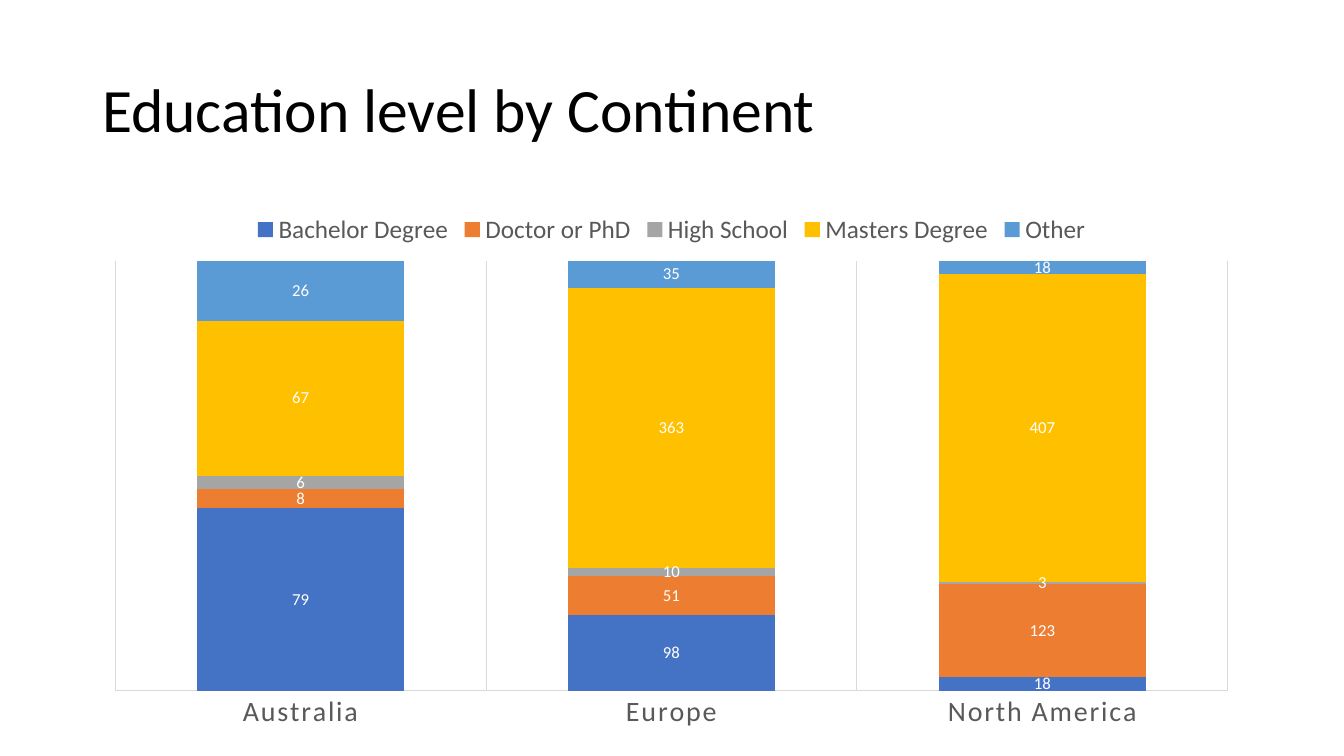
from pptx import Presentation
from pptx.chart.data import CategoryChartData
from pptx.dml.color import RGBColor
from pptx.enum.chart import XL_CHART_TYPE, XL_LABEL_POSITION, XL_LEGEND_POSITION, XL_TICK_MARK
from pptx.enum.text import MSO_ANCHOR, PP_ALIGN
from pptx.util import Emu, Pt

STACKED_100 = XL_CHART_TYPE.COLUMN_STACKED_100
LABEL_CENTER = XL_LABEL_POSITION.CENTER
LEGEND_TOP = XL_LEGEND_POSITION.TOP
NO_TICKS = XL_TICK_MARK.NONE
MIDDLE = MSO_ANCHOR.MIDDLE
LEFT = PP_ALIGN.LEFT

FONT = "Calibri"
BLACK, WHITE, TEXT_GREY, LINE_GREY = "000000", "FFFFFF", "595959", "D9D9D9"
TITLE_ONLY_LAYOUT = 5
CONTINENTS = ["Australia", "Europe", "North America"]
EDUCATION_LEVELS = [
    ("Bachelor Degree", (79, 98, 18), "4472C4"),
    ("Doctor or PhD", (8, 51, 123), "ED7D31"),
    ("High School", (6, 10, 3), "A5A5A5"),
    ("Masters Degree", (67, 363, 407), "FFC000"),
    ("Other", (26, 35, 18), "5B9BD5"),
]


def px(length):
    return Emu(round(length * 914400 / 100.8))


def color(hex_string):
    return RGBColor.from_string(hex_string)


def style_font(font, size, hex_string):
    font.name = FONT
    font.size = Pt(size)
    font.bold = False
    font.color.rgb = color(hex_string)


def style_line(line, hex_string):
    line.color.rgb = color(hex_string)
    line.width = Pt(0.75)


def set_title(page, text, left, top, width, height):
    box = page.shapes.title
    box.left, box.top, box.width, box.height = map(px, (left, top, width, height))
    frame = box.text_frame
    frame.vertical_anchor = MIDDLE
    para = frame.paragraphs[0]
    para.alignment = LEFT
    para.line_spacing = 0.9
    span = para.add_run()
    span.text = text
    style_font(span.font, 44, BLACK)


def style_axes(chart):
    # Continent names with wide letter spacing, divided by vertical gridlines
    axis = chart.category_axis
    axis.major_tick_mark = axis.minor_tick_mark = NO_TICKS
    axis.has_major_gridlines = True
    style_line(axis.major_gridlines.format.line, LINE_GREY)
    style_line(axis.format.line, LINE_GREY)
    labels = axis.tick_labels
    style_font(labels.font, 20, TEXT_GREY)
    for properties in axis._element.txPr.iter("{*}defRPr"):
        properties.set("spc", "120")

    chart.value_axis.has_major_gridlines = False
    chart.value_axis.visible = False


def style_series(series, hex_string):
    series.format.fill.solid()
    series.format.fill.fore_color.rgb = color(hex_string)
    series.invert_if_negative = False
    labels = series.data_labels
    labels.show_value = True
    labels.position = LABEL_CENTER
    style_font(labels.font, 12, WHITE)


def add_stacked_chart(page, left, top, width, height):
    data = CategoryChartData()
    data.categories = CONTINENTS
    for name, values, _ in EDUCATION_LEVELS:
        data.add_series(name, values)
    chart = page.shapes.add_chart(
        STACKED_100, px(left), px(top), px(width), px(height), data
    ).chart
    style_font(chart.font, 10, BLACK)
    chart.has_title = False

    # Legend
    chart.has_legend = True
    chart.legend.position = LEGEND_TOP
    chart.legend.include_in_layout = False
    style_font(chart.legend.font, 18, TEXT_GREY)

    # Columns
    plot = chart.plots[0]
    plot.gap_width = 79
    plot.overlap = 100
    plot.vary_by_categories = False
    for series, (_, _, hex_string) in zip(plot.series, EDUCATION_LEVELS):
        style_series(series, hex_string)
    style_axes(chart)


def main():
    deck = Presentation()
    deck.slide_width, deck.slide_height = px(1344), px(756)
    page = deck.slides.add_slide(deck.slide_layouts[TITLE_ONLY_LAYOUT])
    set_title(page, "Education level by Continent", 92, 40, 1159, 146)
    add_stacked_chart(page, 92, 202, 1159, 538)
    deck.save("out.pptx")


if __name__ == "__main__":
    main()
